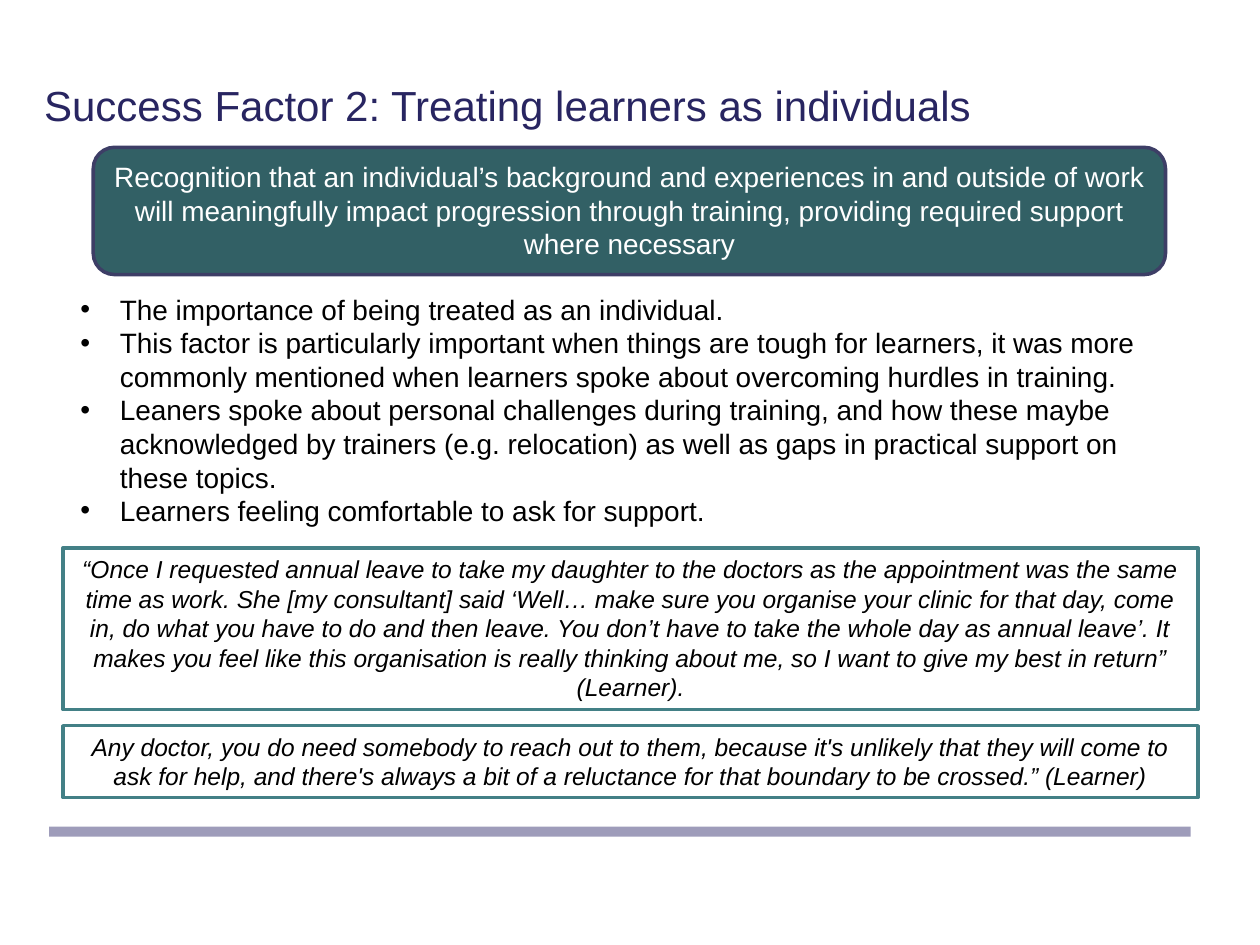
from dataclasses import dataclass
from typing import Optional

from lxml.etree import SubElement
from pptx import Presentation
from pptx.dml.color import RGBColor
from pptx.enum.shapes import MSO_SHAPE
from pptx.enum.text import MSO_ANCHOR, MSO_AUTO_SIZE, PP_ALIGN
from pptx.oxml.ns import qn
from pptx.util import Pt

FONT = "Arial"
COLORS = {
    "title": "282561", "text": "000000", "white": "FFFFFF",
    "banner": "326065", "banner_line": "3D3E66",
    "quote_line": "438086", "rule": "9E9CBA",
}
BULLET_INDENT = 22.5


@dataclass
class Box:
    left: float
    top: float
    width: float
    height: float
    fill: str
    line: Optional[str] = None
    text: str = ""
    size: float = 14
    color: str = "text"
    italic: bool = False
    shape: MSO_SHAPE = MSO_SHAPE.RECTANGLE


RULE = Box(28.1, 472.3, 652.3, 5.8, "rule")
BANNER = Box(
    53.3, 84.2, 612.7, 72.7, "banner", "banner_line",
    "Recognition that an individual’s background and experiences in and outside of work "
    "will meaningfully impact progression through training, providing required support "
    "where necessary",
    size=16, color="white", shape=MSO_SHAPE.ROUNDED_RECTANGLE)
BULLETS = [
    "The importance of being treated as an individual.",
    "This factor is particularly important when things are tough for learners, it was more "
    "commonly mentioned when learners spoke about overcoming hurdles in training.",
    "Leaners spoke about personal challenges during training, and how these maybe "
    "acknowledged by trainers (e.g. relocation) as well as gaps in practical support on "
    "these topics.",
    "Learners feeling comfortable to ask for support.",
]
QUOTES = [
    Box(36, 313.2, 648.7, 92.2, "white", "quote_line",
        "“Once I requested annual leave to take my daughter to the doctors as the appointment "
        "was the same time as work. She [my consultant] said ‘Well… make sure you organise "
        "your clinic for that day, come in, do what you have to do and then leave. You don’t "
        "have to take the whole day as annual leave’. It makes you feel like this "
        "organisation is really thinking about me, so I want to give my best in return” "
        "(Learner).", italic=True),
    Box(36, 414.7, 648.7, 41, "white", "quote_line",
        "Any doctor, you do need somebody to reach out to them, because it's unlikely that "
        "they will come to ask for help, and there's always a bit of a reluctance for that "
        "boundary to be crossed.” (Learner)", italic=True),
]


def rgb(name: str) -> RGBColor:
    return RGBColor.from_string(COLORS[name])


def format_runs(p, size: float, color: str, italic: bool = False) -> None:
    for r in p.runs:
        r.font.name, r.font.size, r.font.italic = FONT, Pt(size), italic
        r.font.color.rgb = rgb(color)


def add_box(s, box: Box) -> None:
    sp = s.shapes.add_shape(box.shape, Pt(box.left), Pt(box.top),
                            Pt(box.width), Pt(box.height))
    sp.shadow.inherit = False
    sp.fill.solid()
    sp.fill.fore_color.rgb = rgb(box.fill)
    if box.line:
        sp.line.color.rgb = rgb(box.line)
        sp.line.width = Pt(2)
    else:
        sp.line.fill.background()
    if box.text:
        tf = sp.text_frame
        tf.text = box.text
        tf.word_wrap = True
        tf.auto_size = MSO_AUTO_SIZE.SHAPE_TO_FIT_TEXT
        tf.vertical_anchor = MSO_ANCHOR.TOP
        p = tf.paragraphs[0]
        p.alignment = PP_ALIGN.CENTER
        format_runs(p, box.size, box.color, box.italic)


def add_title(s, text: str) -> None:
    sp = s.shapes.title
    sp.left, sp.top, sp.width, sp.height = Pt(18), Pt(15.1), Pt(684), Pt(90)
    tf = sp.text_frame
    tf.text = text
    tf.auto_size = MSO_AUTO_SIZE.NONE
    tf.vertical_anchor = MSO_ANCHOR.MIDDLE
    p = tf.paragraphs[0]
    p.alignment = PP_ALIGN.LEFT
    format_runs(p, 24, "title")


def add_bullets(s, items: list[str]) -> None:
    sp = s.shapes.add_textbox(Pt(38.9), Pt(163.4), Pt(642.2), Pt(143.3))
    tf = sp.text_frame
    tf.word_wrap = True
    tf.auto_size = MSO_AUTO_SIZE.SHAPE_TO_FIT_TEXT
    tf.text = "\n".join(items)
    for p in tf.paragraphs:
        pPr = p._p.get_or_add_pPr()
        pPr.set("marL", str(Pt(BULLET_INDENT)))
        pPr.set("indent", str(Pt(-BULLET_INDENT)))
        SubElement(pPr, qn("a:buFont"), typeface=FONT)
        SubElement(pPr, qn("a:buChar"), char="•")
        format_runs(p, 16, "text")


def main() -> None:
    prs = Presentation()
    prs.slide_width, prs.slide_height = Pt(720), Pt(540)
    s = prs.slides.add_slide(prs.slide_layouts[5])

    # Footer rule, title and key message
    add_box(s, RULE)
    add_title(s, "Success Factor 2: Treating learners as individuals")
    add_box(s, BANNER)

    # Findings and supporting quotes
    add_bullets(s, BULLETS)
    for quote in QUOTES:
        add_box(s, quote)

    prs.save("out.pptx")


if __name__ == "__main__":
    main()
